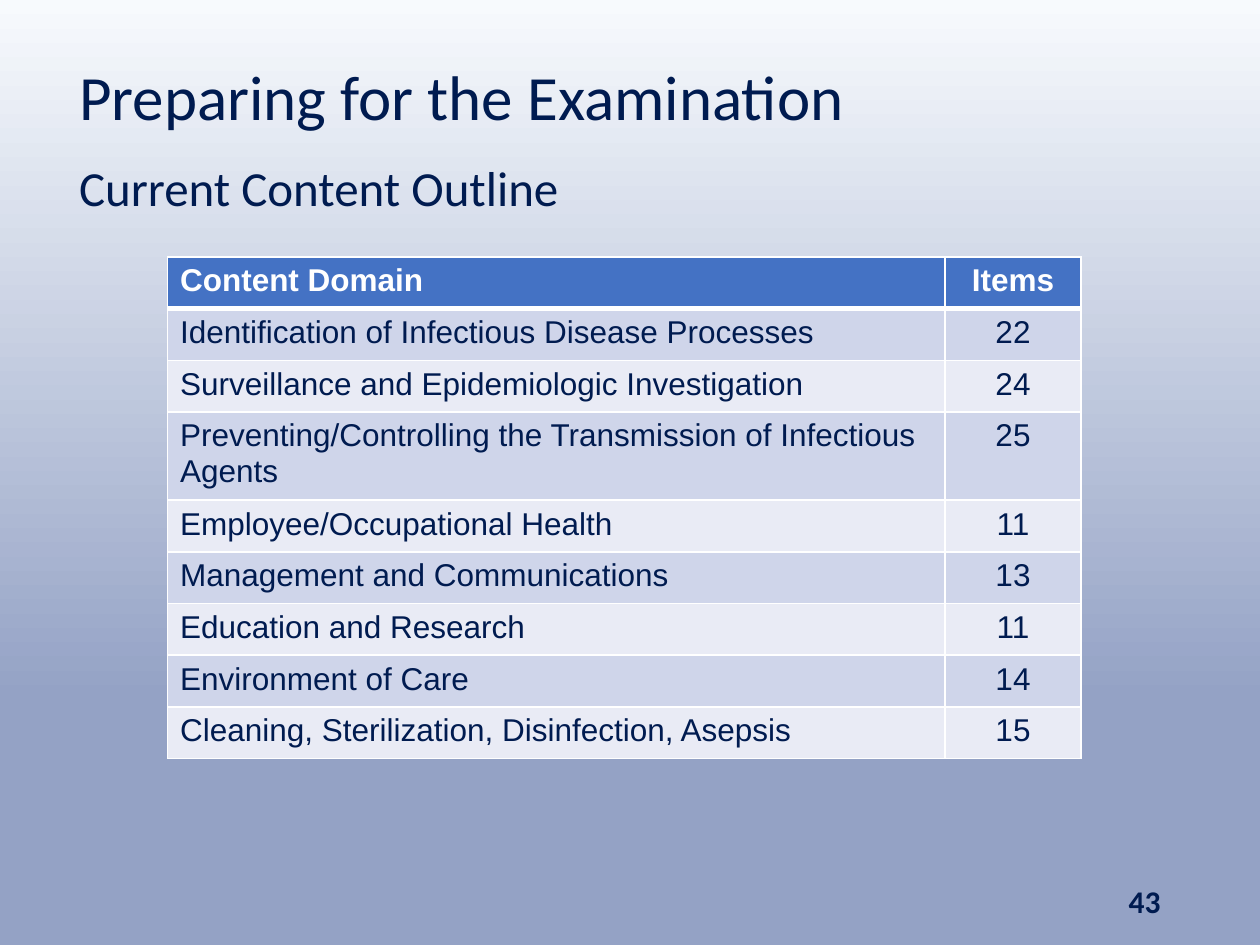
from lxml import etree
from pptx import Presentation
from pptx.dml.color import RGBColor
from pptx.enum import text
from pptx.oxml.ns import qn
from pptx.util import Inches, Pt

NAVY, WHITE, BLUE = "001B50", "FFFFFF", "4472C4"
BANDS = ["E9EBF5", "CFD5EA"]
ROWS = [
    ("Content Domain", "Items"),
    ("Identification of Infectious Disease Processes", "22"),
    ("Surveillance and Epidemiologic Investigation", "24"),
    ("Preventing/Controlling the Transmission of Infectious Agents", "25"),
    ("Employee/Occupational Health", "11"),
    ("Management and Communications", "13"),
    ("Education and Research", "11"),
    ("Environment of Care", "14"),
    ("Cleaning, Sterilization, Disinfection, Asepsis", "15"),
]
LEFT, CENTER, RIGHT = (text.PP_ALIGN.LEFT, text.PP_ALIGN.CENTER,
                       text.PP_ALIGN.RIGHT)
TOP, MIDDLE = text.MSO_ANCHOR.TOP, text.MSO_ANCHOR.MIDDLE


def rgb(value):
    return RGBColor.from_string(value)


def write(tf, content, size=18, font="Calibri", color=NAVY, bold=False,
          align=LEFT, spacing=None):
    p = tf.paragraphs[0]
    p.alignment = align
    p.line_spacing = spacing
    r = p.add_run()
    r.text = content
    r.font.size, r.font.name, r.font.bold = Pt(size), font, bold
    r.font.color.rgb = rgb(color)


def add_text(slide, content, left, top, width, height, anchor=TOP, **style):
    tf = slide.shapes.add_textbox(Inches(left), Inches(top), Inches(width),
                                  Inches(height)).text_frame
    tf.word_wrap = True
    tf.vertical_anchor = anchor
    write(tf, content, **style)


def set_background(slide):
    fill = slide.background.fill
    fill.gradient()
    fill.gradient_angle = 270
    for stop, color, position in zip(fill.gradient_stops,
                                     ["F7FAFD", "94A2C5"], [0, 0.74]):
        stop.color.rgb = rgb(color)
        stop.position = position


def set_borders(cell, **widths):
    """Draw white cell borders; they must come before the fill."""
    tc_pr = cell._tc.get_or_add_tcPr()
    for i, (side, width) in enumerate(widths.items()):
        ln = etree.Element(qn(f"a:ln{side}"), w=str(Pt(width)))
        fill = etree.SubElement(ln, qn("a:solidFill"))
        etree.SubElement(fill, qn("a:srgbClr"), val=WHITE)
        tc_pr.insert(i, ln)


def add_domain_table(slide):
    table = slide.shapes.add_table(len(ROWS), 2, Inches(1.33), Inches(2.04),
                                   Inches(7.25), Inches(3.65)).table
    for column, width in zip(table.columns, [6.17, 1.08]):
        column.width = Inches(width)
    for i, values in enumerate(ROWS):
        header = i == 0
        table.rows[i].height = Inches(0.41)
        for j, value in enumerate(values):
            cell = table.cell(i, j)
            cell.fill.solid()
            cell.fill.fore_color.rgb = rgb(BLUE if header else BANDS[i % 2])
            set_borders(cell, L=1, R=1, T=3 if i == 1 else 1,
                        B=3 if header else 1)
            write(cell.text_frame, value, font="Arial", bold=header,
                  color=WHITE if header else NAVY,
                  align=CENTER if j else LEFT)


def main():
    prs = Presentation()
    prs.slide_width, prs.slide_height = Inches(10), Inches(7.5)
    slide = prs.slides.add_slide(prs.slide_layouts[6])
    set_background(slide)

    # Headings
    add_text(slide, "Preparing for the Examination", 0.53, 0.17, 9, 1.25,
             anchor=MIDDLE, size=36, spacing=0.9)
    add_text(slide, "Current Content Outline", 0.53, 1.25, 9, 0.6,
             size=28, spacing=0.9)

    # Content outline
    add_domain_table(slide)

    # Page number
    add_text(slide, "43", 7.06, 6.95, 2.25, 0.4, anchor=MIDDLE, bold=True,
             align=RIGHT)
    prs.save("out.pptx")


if __name__ == "__main__":
    main()
